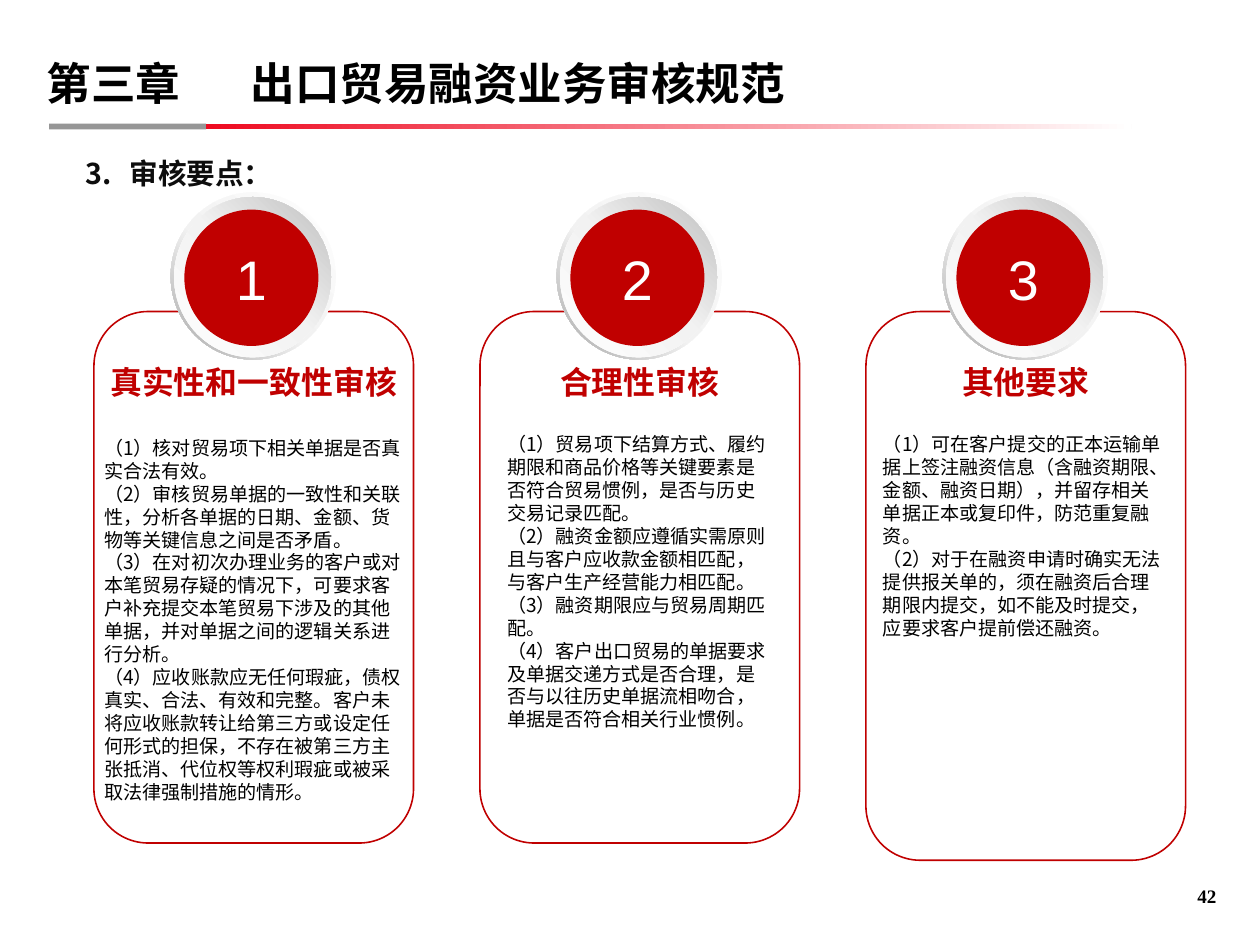
from dataclasses import dataclass

from lxml.etree import SubElement
from pptx import Presentation
from pptx.dml.color import RGBColor
from pptx.enum.shapes import MSO_SHAPE as Preset
from pptx.enum.text import MSO_ANCHOR as Anchor, MSO_AUTO_SIZE as AutoSize, PP_ALIGN as Align
from pptx.oxml.ns import qn
from pptx.shapes.autoshape import Shape
from pptx.slide import Slide
from pptx.text.text import TextFrame
from pptx.util import Inches, Pt

CJK_FONT = "Noto Sans CJK SC"
RED = RGBColor(0xC0, 0x00, 0x00)
BRIGHT_RED = RGBColor(0xEE, 0x0A, 0x20)
WHITE = RGBColor(0xFF, 0xFF, 0xFF)
BLACK = RGBColor(0x00, 0x00, 0x00)
NEAR_BLACK = RGBColor(0x0D, 0x0D, 0x0D)
RULE_GRAY = RGBColor(0x96, 0x96, 0x96)
PALE_GRAY = RGBColor(0xF2, 0xF2, 0xF2)
RIM_GRAY = RGBColor(0xA6, 0xA6, 0xA6)
DISC_GRAY = RGBColor(0xBF, 0xBF, 0xBF)

FIRST_LEFT, PITCH, CARD_TOP, CARD_WIDTH = 0.82, 3.37, 2.72, 2.79


@dataclass
class Area:
    left: float
    top: float
    width: float
    height: float

    def lengths(self) -> list[Inches]:
        return [Inches(n) for n in (self.left, self.top, self.width, self.height)]


@dataclass
class TextStyle:
    size: float
    color: RGBColor
    bold: bool = False
    font: str = CJK_FONT
    align: Align = Align.LEFT
    spacing: float | Pt | None = None


@dataclass
class Gradient:
    stops: list[tuple[int, RGBColor]]
    angle: int


@dataclass
class Card:
    heading: str
    height: float
    text_area: Area
    inset: float
    points: list[str]


RULE_FADE = Gradient([(0, BRIGHT_RED), (100, WHITE)], 0)
RIM = Gradient([(0, WHITE), (55, PALE_GRAY), (100, RIM_GRAY)], 135)
DISC = Gradient([(0, WHITE), (51, PALE_GRAY), (100, DISC_GRAY)], 315)

TITLE = TextStyle(28, BLACK, True, spacing=0.85)
SUBTITLE = TextStyle(18, NEAR_BLACK, True, spacing=Pt(32.4))
HEADING = TextStyle(20, RED, True, align=Align.CENTER, spacing=Pt(24))
POINT = TextStyle(12, BLACK, spacing=Pt(14.4))
NUMBER = TextStyle(35, WHITE, font="Arial", align=Align.CENTER)
PAGE_NUMBER = TextStyle(12, BLACK, True, "Times New Roman", Align.RIGHT)

CARDS = [
    Card("真实性和一致性审核", 4.64, Area(0.91, 3.81, 2.6, 3.23), 0, [
        "（1）核对贸易项下相关单据是否真实合法有效。",
        "（2）审核贸易单据的一致性和关联性，分析各单据的日期、金额、货物等关键信息之间是否矛盾。",
        "（3）在对初次办理业务的客户或对本笔贸易存疑的情况下，可要求客户补充提交本笔贸易下涉及的"
        "其他单据，并对单据之间的逻辑关系进行分析。",
        "（4）应收账款应无任何瑕疵，债权真实、合法、有效和完整。客户未将应收账款转让给第三方或设定"
        "任何形式的担保，不存在被第三方主张抵消、代位权等权利瑕疵或被采取法律强制措施的情形。",
    ]),
    Card("合理性审核", 4.64, Area(4.33, 3.73, 2.5, 2.73), 0.1, [
        "（1）贸易项下结算方式、履约期限和商品价格等关键要素是否符合贸易惯例，是否与历史交易记录匹配。",
        "（2）融资金额应遵循实需原则且与客户应收款金额相匹配，与客户生产经营能力相匹配。",
        "（3）融资期限应与贸易周期匹配。",
        "（4）客户出口贸易的单据要求及单据交递方式是否合理，是否与以往历史单据流相吻合，"
        "单据是否符合相关行业惯例。",
    ]),
    Card("其他要求", 4.79, Area(7.61, 3.73, 2.65, 1.92), 0.1, [
        "（1）可在客户提交的正本运输单据上签注融资信息（含融资期限、金额、融资日期），"
        "并留存相关单据正本或复印件，防范重复融资。",
        "（2）对于在融资申请时确实无法提供报关单的，须在融资后合理期限内提交，如不能及时提交，"
        "应要求客户提前偿还融资。",
    ]),
]


def write(frame: TextFrame, lines: list[str], style: TextStyle,
          inset: tuple[float, float] = (0, 0), anchor: Anchor = Anchor.TOP) -> None:
    """Fill a frame; inset is the horizontal and the vertical margin in inches."""
    across, down = map(Inches, inset)
    frame_format = {"word_wrap": True, "auto_size": AutoSize.NONE, "vertical_anchor": anchor,
                    "margin_left": across, "margin_right": across,
                    "margin_top": down, "margin_bottom": down}
    for name, value in frame_format.items():
        setattr(frame, name, value)
    for index, line in enumerate(lines):
        para = frame.add_paragraph() if index else frame.paragraphs[0]
        para_format = {"alignment": style.align, "line_spacing": style.spacing,
                       "space_before": Pt(0)}
        for name, value in para_format.items():
            setattr(para, name, value)
        span = para.add_run()
        span.text = line
        font_format = {"size": Pt(style.size), "bold": style.bold, "name": style.font}
        for name, value in font_format.items():
            setattr(span.font, name, value)
        span.font.color.rgb = style.color
        SubElement(span.font._element, qn("a:ea"), typeface=style.font)


def add_text(page: Slide, area: Area, lines: list[str], style: TextStyle,
             inset: tuple[float, float] = (0, 0), anchor: Anchor = Anchor.TOP) -> None:
    box = page.shapes.add_textbox(*area.lengths())
    write(box.text_frame, lines, style, inset, anchor)


def fill_gradient(shape: Shape, gradient: Gradient) -> None:
    shape.fill.gradient()
    fill = shape._element.spPr.find(qn("a:gradFill"))
    for child in list(fill):
        fill.remove(child)
    stops = SubElement(fill, qn("a:gsLst"))
    for position, color in gradient.stops:
        stop = SubElement(stops, qn("a:gs"), pos=str(position * 1000))
        SubElement(stop, qn("a:srgbClr"), val=str(color))
    SubElement(fill, qn("a:lin"), ang=str(gradient.angle * 60000), scaled="0")


def add_shape(page: Slide, preset: Preset, area: Area,
              fill: RGBColor | Gradient | None = None, line: RGBColor | None = None,
              adjustment: float | None = None) -> Shape:
    shape = page.shapes.add_shape(preset, *area.lengths())
    shape.shadow.inherit = False
    if isinstance(fill, Gradient):
        fill_gradient(shape, fill)
    elif fill is None:
        shape.fill.background()
    else:
        shape.fill.solid()
        shape.fill.fore_color.rgb = fill
    if line is None:
        shape.line.fill.background()
    else:
        shape.line.color.rgb = line
        shape.line.width = Pt(1)
    if adjustment is not None:
        shape.adjustments[0] = adjustment
    return shape


def add_card(page: Slide, index: int, card: Card) -> None:
    left = FIRST_LEFT + index * PITCH
    add_shape(page, Preset.ROUNDED_RECTANGLE, Area(left, CARD_TOP, CARD_WIDTH, card.height),
              line=RED, adjustment=0.17)
    add_shape(page, Preset.DONUT, Area(left + 0.67, 1.68, 1.44, 1.46), RIM, adjustment=0.05)
    add_shape(page, Preset.OVAL, Area(left + 0.7, 1.72, 1.37, 1.4), DISC)
    badge = add_shape(page, Preset.OVAL, Area(left + 0.79, 1.83, 1.17, 1.19), RED)
    write(badge.text_frame, [str(index + 1)], NUMBER, (0.09, 0.04), Anchor.MIDDLE)
    add_text(page, Area(left, 3.13, CARD_WIDTH, 0.42), [card.heading], HEADING, (0.09, 0.04))
    add_text(page, card.text_area, card.points, POINT, (card.inset, card.inset / 2))


def place(shape: Shape, area: Area) -> None:
    shape.left, shape.top, shape.width, shape.height = area.lengths()


def add_headings(page: Slide) -> None:
    title, body = page.shapes.title, page.placeholders[1]
    place(title, Area(0.41, 0.36, 8.71, 0.6))
    write(title.text_frame, ["第三章\t出口贸易融资业务审核规范"], TITLE, anchor=Anchor.BOTTOM)
    title_format = title.text_frame.paragraphs[0]._p.get_or_add_pPr()
    tabs = SubElement(title_format, qn("a:tabLst"))
    SubElement(tabs, qn("a:tab"), pos=str(Inches(1.78)), algn="l")

    place(body, Area(0.65, 1.16, 5.5, 0.47))
    write(body.text_frame, ["审核要点："], SUBTITLE, (0.1, 0.05))
    body_format = body.text_frame.paragraphs[0]._p.get_or_add_pPr()
    body_format.set("marL", str(Inches(0.38)))
    body_format.set("indent", str(Inches(-0.38)))
    SubElement(body_format, qn("a:buFont"), typeface=CJK_FONT)
    SubElement(body_format, qn("a:buAutoNum"), type="arabicPeriod", startAt="3")


def main() -> None:
    deck = Presentation()
    deck.slide_width, deck.slide_height = Inches(11), Inches(8.25)
    page = deck.slides.add_slide(deck.slide_layouts[1])
    add_headings(page)
    add_shape(page, Preset.RECTANGLE, Area(0.43, 1.08, 1.37, 0.05), RULE_GRAY)
    add_shape(page, Preset.RECTANGLE, Area(1.8, 1.08, 8.08, 0.05), RULE_FADE)
    for index, card in enumerate(CARDS):
        add_card(page, index, card)
    add_text(page, Area(10.17, 7.5, 0.45, 0.42), ["42"], PAGE_NUMBER, anchor=Anchor.BOTTOM)
    deck.save("out.pptx")


if __name__ == "__main__":
    main()
